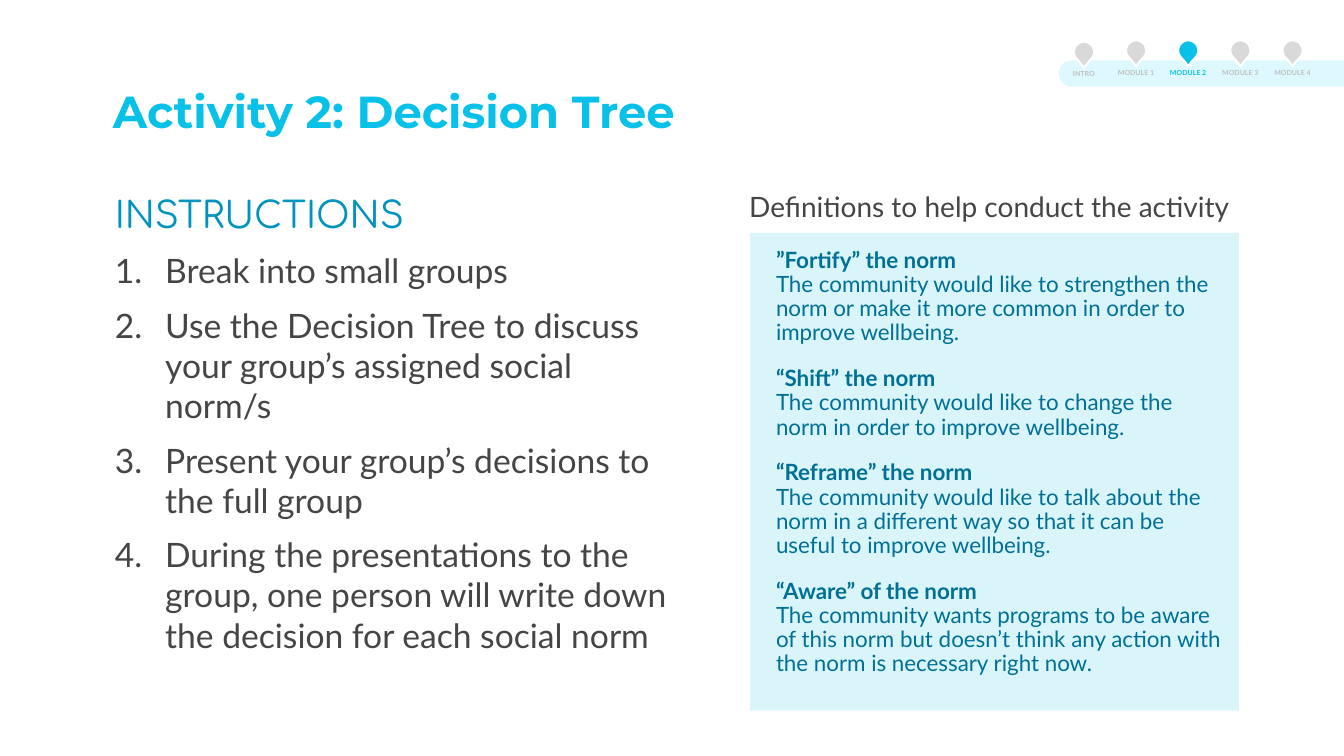
from lxml import etree
from pptx import Presentation
from pptx.dml.color import RGBColor
from pptx.enum.shapes import MSO_CONNECTOR, MSO_SHAPE
from pptx.enum.text import MSO_ANCHOR, PP_ALIGN
from pptx.oxml.ns import qn
from pptx.util import Inches, Pt

RECT, TEARDROP = MSO_SHAPE.RECTANGLE, MSO_SHAPE.TEAR
STRAIGHT = MSO_CONNECTOR.STRAIGHT
LEFT, CENTER, TOP = PP_ALIGN.LEFT, PP_ALIGN.CENTER, MSO_ANCHOR.TOP

WHITE = RGBColor(0xFF, 0xFF, 0xFF)
CYAN = RGBColor(0x07, 0xC1, 0xE8)
BLUE = RGBColor(0x01, 0x93, 0xC0)
TEAL = RGBColor(0x00, 0x70, 0x96)
INK = RGBColor(0x45, 0x45, 0x45)
PIN_GRAY = RGBColor(0xD9, 0xD9, 0xD9)
LABEL_GRAY = RGBColor(0xBF, 0xBF, 0xBF)
PANEL = RGBColor(0xCD, 0xF2, 0xF9)
TRACK = RGBColor(0xBD, 0xF4, 0xFF)

STEPS = [
    "Break into small groups",
    "Use the Decision Tree to discuss your group’s assigned social norm/s",
    "Present your group’s decisions to the full group",
    "During the presentations to the group, one person will write down "
    "the decision for each social norm",
]
DEFINITIONS = [
    ("”Fortify” the norm", "The community would like to strengthen the norm or "
     "make it more common in order to improve wellbeing.", 4),
    ("“Shift” the norm", "The community would like to change the norm in order "
     "to improve wellbeing.", 3),
    ("“Reframe” the norm", "The community would like to talk about the norm in "
     "a different way so that it can be useful to improve wellbeing.", 4),
    ("“Aware” of the norm", "The community wants programs to be aware of this "
     "norm but doesn’t think any action with the norm is necessary right now.", 4),
]
MODULES = ["INTRO", "MODULE 1", "MODULE 2", "MODULE 3", "MODULE 4"]
CURRENT = "MODULE 2"


class Deck:
    """Lengths are percentages of the slide's width and height."""

    head_font, sub_font, body_font = "Montserrat", "Comfortaa", "Lato"

    def __init__(self):
        self.prs = Presentation()
        self.prs.slide_width = Inches(13.33)
        self.prs.slide_height = Inches(7.5)
        self.s = self.prs.slides.add_slide(self.prs.slide_layouts[6])

    def x(self, share):
        return round(self.prs.slide_width * share / 100)

    def y(self, share):
        return round(self.prs.slide_height * share / 100)

    def box(self, left, top, width, height):
        return self.x(left), self.y(top), self.x(width), self.y(height)

    def text(self, *box, wrap=True, inset=True):
        tf = self.s.shapes.add_textbox(*self.box(*box)).text_frame
        tf.word_wrap = wrap
        tf.vertical_anchor = TOP
        if not inset:
            tf.margin_left = tf.margin_right = 0
            tf.margin_top = tf.margin_bottom = 0
        return tf

    def style(self, p, size, color, font=body_font, bold=None, align=LEFT):
        p.font.name, p.font.size, p.font.bold = font, Pt(size), bold
        p.font.color.rgb = color
        p.alignment = align

    def alpha(self, color_parent, percent):
        color = next(color_parent.iter(qn("a:srgbClr")))
        etree.SubElement(color, qn("a:alpha"), val=str(percent * 1000))

    def shape(self, kind, color, *box):
        sp = self.s.shapes.add_shape(kind, *self.box(*box))
        sp.shadow.inherit = False
        sp.fill.solid()
        sp.fill.fore_color.rgb = color
        sp.line.fill.background()
        return sp

    def title(self, wording):
        p = self.text(8.4, 11.87, 83.2, 4.93, inset=False).paragraphs[0]
        p.text = wording
        p.line_spacing = 0.9
        self.style(p, 32, CYAN, self.head_font, True)

    def instructions(self, heading, steps):
        tf = self.text(7.8, 24.8, 43.13, 69.33)
        p = tf.paragraphs[0]
        p.text = heading
        p.space_before = Pt(10)
        self.style(p, 26, BLUE, self.sub_font)
        for step in steps:
            p = tf.add_paragraph()
            p.text = step
            p.space_before = Pt(10)
            self.style(p, 24, INK)
            self.number(p)

    def number(self, p):
        pPr = p._p.get_or_add_pPr()
        pPr.set("marL", str(Inches(0.5)))
        pPr.set("indent", str(-Inches(0.5)))
        bullet = etree.Element(qn("a:buAutoNum"), type="arabicPeriod")
        pPr.find(qn("a:defRPr")).addprevious(bullet)

    def panel(self, heading, definitions):
        sp = self.shape(RECT, PANEL, 55.8, 30.8, 36.38, 63.2)
        self.alpha(sp._element.spPr.find(qn("a:solidFill")), 75)
        p = self.text(55, 24.4, 37.96, 5.87, wrap=False).paragraphs[0]
        p.text = heading
        self.style(p, 20, INK)
        top = 32.27
        for term, meaning, lines in definitions:
            height = 3.2 * lines + 1.47
            self.definition(term, meaning, top, height)
            top += height + 1.4

    def definition(self, term, meaning, top, height):
        p = self.text(57, top, 35.18, height).paragraphs[0]
        p.line_spacing = 0.9
        self.style(p, 16, TEAL)
        r = p.add_run()
        r.text = term
        r.font.bold = True
        p.add_line_break()
        p.add_run().text = meaning

    def track(self, left, top):
        line = self.s.shapes.add_connector(
            STRAIGHT, self.x(left), self.y(top), self.x(100), self.y(top))
        line.line.color.rgb = TRACK
        line.line.width = Pt(18.75)
        ln = line.line._ln
        ln.set("cap", "rnd")
        self.alpha(ln, 50)
        etree.SubElement(line._element.spPr, qn("a:effectLst"))

    def pin(self, label, center, drop, active):
        sp = self.shape(TEARDROP, CYAN if active else PIN_GRAY,
                        center - 0.75, 5.33 + drop, 1.5, 2.67)
        sp.adjustments[0] = 1.12
        sp.rotation = 135
        sp.line.color.rgb = WHITE
        sp.line.width = Pt(1.5)
        p = self.text(center - 2.14, 8.4 + drop, 4.28, 2.53,
                      wrap=False).paragraphs[0]
        p.text = label
        self.style(p, 5, CYAN if active else LABEL_GRAY, bold=True, align=CENTER)

    def progress(self, modules, current):
        self.track(79.74, 9.73)
        for i, module in enumerate(modules):
            self.pin(module, 80.65 + 3.88 * i, 0 if i else 0.2, module == current)


def main():
    deck = Deck()
    deck.instructions("INSTRUCTIONS", STEPS)
    deck.panel("Definitions to help conduct the activity", DEFINITIONS)
    deck.title("Activity 2: Decision Tree")
    deck.progress(MODULES, CURRENT)
    deck.prs.save("out.pptx")


if __name__ == "__main__":
    main()
